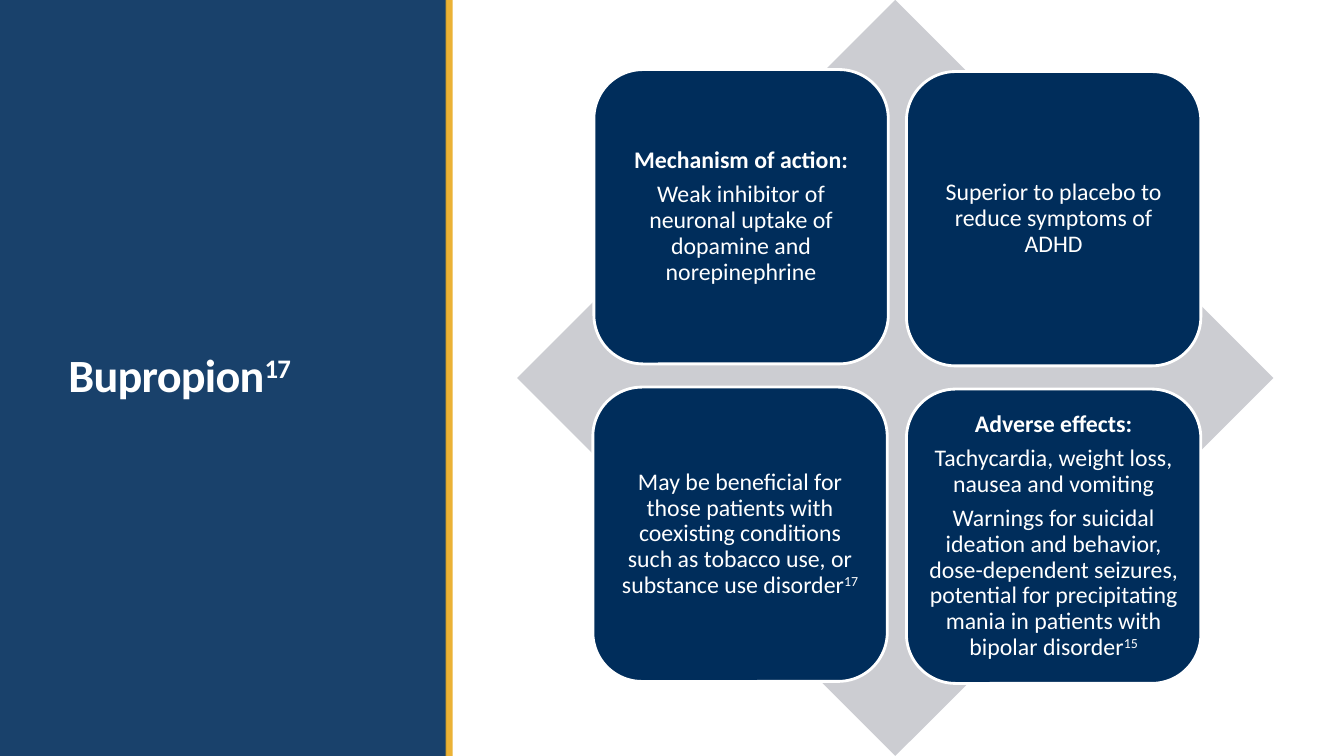
from lxml import etree
from pptx import Presentation
from pptx.dml.color import RGBColor
from pptx.enum.shapes import MSO_SHAPE
from pptx.enum.text import MSO_ANCHOR, PP_ALIGN
from pptx.oxml.ns import qn
from pptx.util import Inches, Pt

RECTANGLE = MSO_SHAPE.RECTANGLE
DIAMOND = MSO_SHAPE.DIAMOND
ROUNDED = MSO_SHAPE.ROUNDED_RECTANGLE
MIDDLE = MSO_ANCHOR.MIDDLE
CENTER = PP_ALIGN.CENTER

COLORS = {"navy": "002D5B", "gold": "E9AA21", "gray": "CCCDD2", "white": "FFFFFF"}
FONT = "Calibri"
CARD_SIZE = 2.92

# Each card: left, top, paragraphs as (text, superscript, bold)
CARDS = [
    (5.88, 3.84, [("May be beneficial for those patients with coexisting conditions "
                   "such as tobacco use, or substance use disorder", "17", False)]),
    (8.99, 0.71, [("Superior to placebo to reduce symptoms of ADHD", "", False)]),
    (5.89, 0.69, [("Mechanism of action:", "", True),
                  ("Weak inhibitor of neuronal uptake of dopamine and norepinephrine",
                   "", False)]),
    (8.99, 3.86, [("Adverse effects:", "", True),
                  ("Tachycardia, weight loss, nausea and vomiting", "", False),
                  ("Warnings for suicidal ideation and behavior, dose-dependent seizures, "
                   "potential for precipitating mania in patients with bipolar disorder",
                   "15", False)]),
]


def color(name):
    return RGBColor.from_string(COLORS[name])


def add_block(slide, kind, left, top, width, height, fill, opacity=100):
    shape = slide.shapes.add_shape(kind, Inches(left), Inches(top),
                                   Inches(width), Inches(height))
    shape.shadow.inherit = False
    shape.fill.solid()
    shape.fill.fore_color.rgb = color(fill)
    shape.line.fill.background()
    if opacity < 100:
        fill_color = shape._element.spPr.find(qn("a:solidFill"))[0]
        etree.SubElement(fill_color, qn("a:alpha")).set("val", str(opacity * 1000))
    return shape


def write_paragraph(paragraph, text, superscript, size, bold, line_spacing):
    paragraph.line_spacing = line_spacing
    paragraph.font.name = FONT
    paragraph.font.size = Pt(size)
    paragraph.font.bold = bold
    paragraph.font.color.rgb = color("white")
    paragraph.add_run().text = text
    if superscript:
        run = paragraph.add_run()
        run.text = superscript
        run.font._element.set("baseline", "30000")


def add_title(slide, text, superscript):
    box = slide.shapes.add_textbox(Inches(0.58), Inches(2.5), Inches(3.5), Inches(2.5))
    frame = box.text_frame
    frame.word_wrap = True
    frame.vertical_anchor = MIDDLE
    paragraph = frame.paragraphs[0]
    write_paragraph(paragraph, text, superscript, 33, True, 0.85)
    for run in paragraph.runs:
        run.font._element.set("spc", "-50")


def add_card(slide, left, top, paragraphs):
    card = add_block(slide, ROUNDED, left, top, CARD_SIZE, CARD_SIZE, "navy")
    card.line.color.rgb = color("white")
    card.line.width = Pt(2)
    frame = card.text_frame
    frame.word_wrap = True
    frame.vertical_anchor = MIDDLE
    frame.margin_left = frame.margin_right = Inches(0.07)
    frame.margin_top = frame.margin_bottom = Inches(0.07)
    for index, (text, superscript, bold) in enumerate(paragraphs):
        paragraph = frame.add_paragraph() if index else frame.paragraphs[0]
        paragraph.alignment = CENTER
        paragraph.space_after = Pt(6)
        write_paragraph(paragraph, text, superscript, 17, bold, 0.9)


def main():
    presentation = Presentation()
    presentation.slide_width = Inches(13.33)
    presentation.slide_height = Inches(7.5)
    slide = presentation.slides.add_slide(presentation.slide_layouts[6])

    # Side panel with title
    add_block(slide, RECTANGLE, 0, 0, 4.43, 7.5, "navy", 90)
    add_block(slide, RECTANGLE, 4.42, 0, 0.07, 7.5, "gold", 90)
    add_title(slide, "Bupropion", "17")

    # Diamond with four cards
    add_block(slide, DIAMOND, 5.13, 0, 7.5, 7.5, "gray")
    for left, top, paragraphs in CARDS:
        add_card(slide, left, top, paragraphs)

    presentation.save("out.pptx")


if __name__ == "__main__":
    main()
